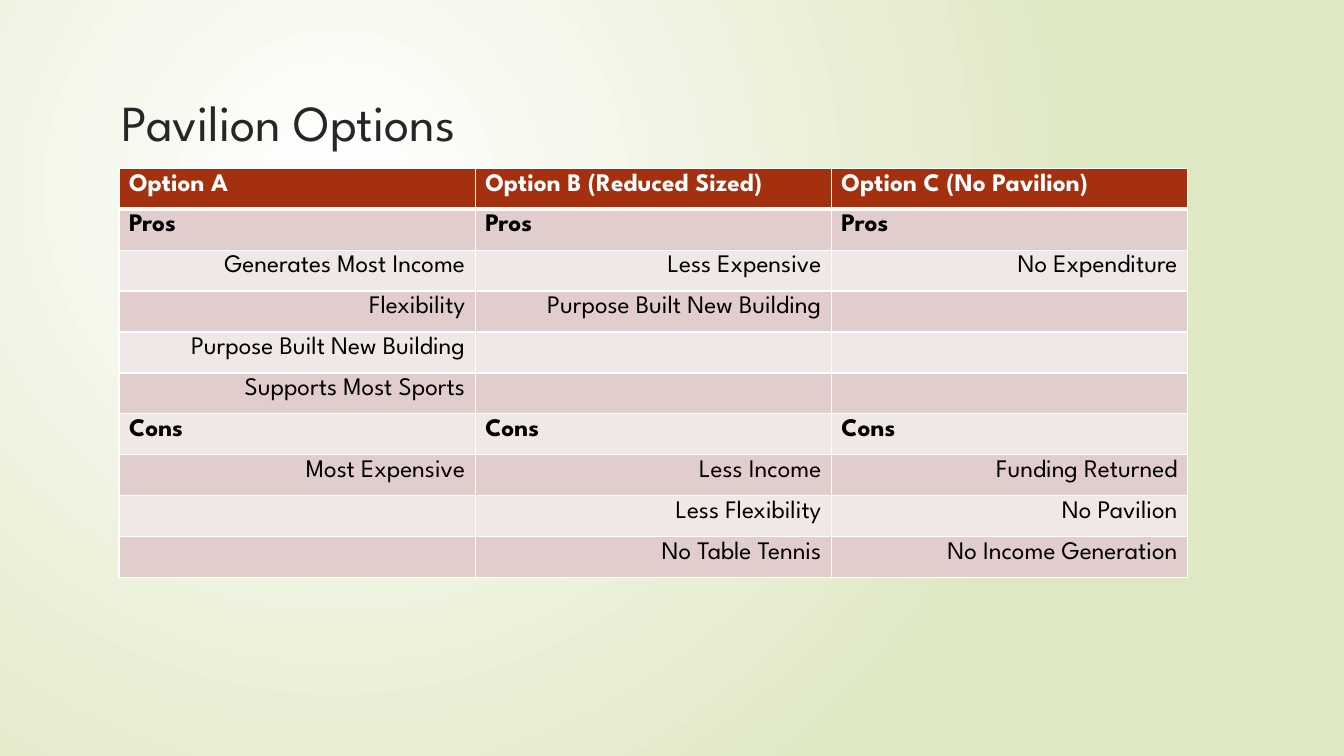
import pptx
import pptx.util
import pptx.dml.color
import pptx.enum.text
import pptx.oxml
import pptx.oxml.ns

Inches = pptx.util.Inches
Pt = pptx.util.Pt
RGBColor = pptx.dml.color.RGBColor

FONT = "League Spartan"
WHITE = RGBColor(0xFF, 0xFF, 0xFF)
BLACK = RGBColor(0, 0, 0)
CHARCOAL = RGBColor(0x26, 0x26, 0x26)
PALE_GREEN = RGBColor(0xDF, 0xE8, 0xC4)
RUST = RGBColor(0xA5, 0x30, 0x10)
DARK_BAND = RGBColor(0xE1, 0xCD, 0xCC)
LIGHT_BAND = RGBColor(0xF0, 0xE8, 0xE7)

OPTIONS = [
    ("Option A", "Option B (Reduced Sized)", "Option C (No Pavilion)"),
    ("Pros", "Pros", "Pros"),
    ("Generates Most Income", "Less Expensive", "No Expenditure"),
    ("Flexibility", "Purpose Built New Building", ""),
    ("Purpose Built New Building", "", ""),
    ("Supports Most Sports", "", ""),
    ("Cons", "Cons", "Cons"),
    ("Most Expensive", "Less Income", "Funding Returned"),
    ("", "Less Flexibility", "No Pavilion"),
    ("", "No Table Tennis", "No Income Generation"),
]
HEADING_ROWS = (0, 1, 6)


def style_font(font, size, color, bold=False):
    font.name = FONT
    font.size = Pt(size)
    font.bold = bold
    font.color.rgb = color


def set_border(cell, side, width):
    line = pptx.oxml.parse_xml(
        f'<a:{side} {pptx.oxml.ns.nsdecls("a")} w="{Pt(width)}">'
        f'<a:solidFill><a:srgbClr val="{WHITE}"/></a:solidFill></a:{side}>'
    )
    properties = cell._tc.get_or_add_tcPr()
    properties.insert(("lnL", "lnR", "lnT", "lnB").index(side), line)


deck = pptx.Presentation()
deck.slide_width = Inches(13.33)
deck.slide_height = Inches(7.5)
page = deck.slides.add_slide(deck.slide_layouts[6])

backdrop = page.background.fill
backdrop.gradient()
for stop, color in zip(backdrop.gradient_stops, (WHITE, PALE_GREEN)):
    stop.color.rgb = color
linear = page.background._cSld.find(".//" + pptx.oxml.ns.qn("a:lin"))
linear.getparent().replace(linear, pptx.oxml.parse_xml(
    f'<a:path {pptx.oxml.ns.nsdecls("a")} path="circle">'
    '<a:fillToRect l="50000" t="50000" r="100000" b="100000"/></a:path>'
))

title = page.shapes.add_textbox(Inches(1.11), Inches(0.68), Inches(11.47), Inches(1.4))
title.text_frame.word_wrap = True
title.text_frame.margin_top = Inches(0.22)
title.text_frame.text = "Pavilion Options"
style_font(title.text_frame.paragraphs[0].runs[0].font, 36, CHARCOAL)

table = page.shapes.add_table(
    len(OPTIONS), 3, Inches(1.18), Inches(1.67), Inches(10.6), Inches(4.06)
).table

for row, entries in enumerate(OPTIONS):
    heading = row in HEADING_ROWS
    for column, entry in enumerate(entries):
        cell = table.cell(row, column)
        cell.text_frame.text = entry
        para = cell.text_frame.paragraphs[0]
        if not heading:
            para.alignment = pptx.enum.text.PP_ALIGN.RIGHT
        for span in para.runs:
            style_font(span.font, 18, BLACK if row else WHITE, heading)
        for side in ("lnL", "lnR", "lnT", "lnB"):
            header_edge = (row, side) in ((0, "lnB"), (1, "lnT"))
            set_border(cell, side, 3 if header_edge else 1)
        cell.fill.solid()
        if row == 0:
            cell.fill.fore_color.rgb = RUST
        else:
            cell.fill.fore_color.rgb = DARK_BAND if row % 2 else LIGHT_BAND

deck.save("out.pptx")
